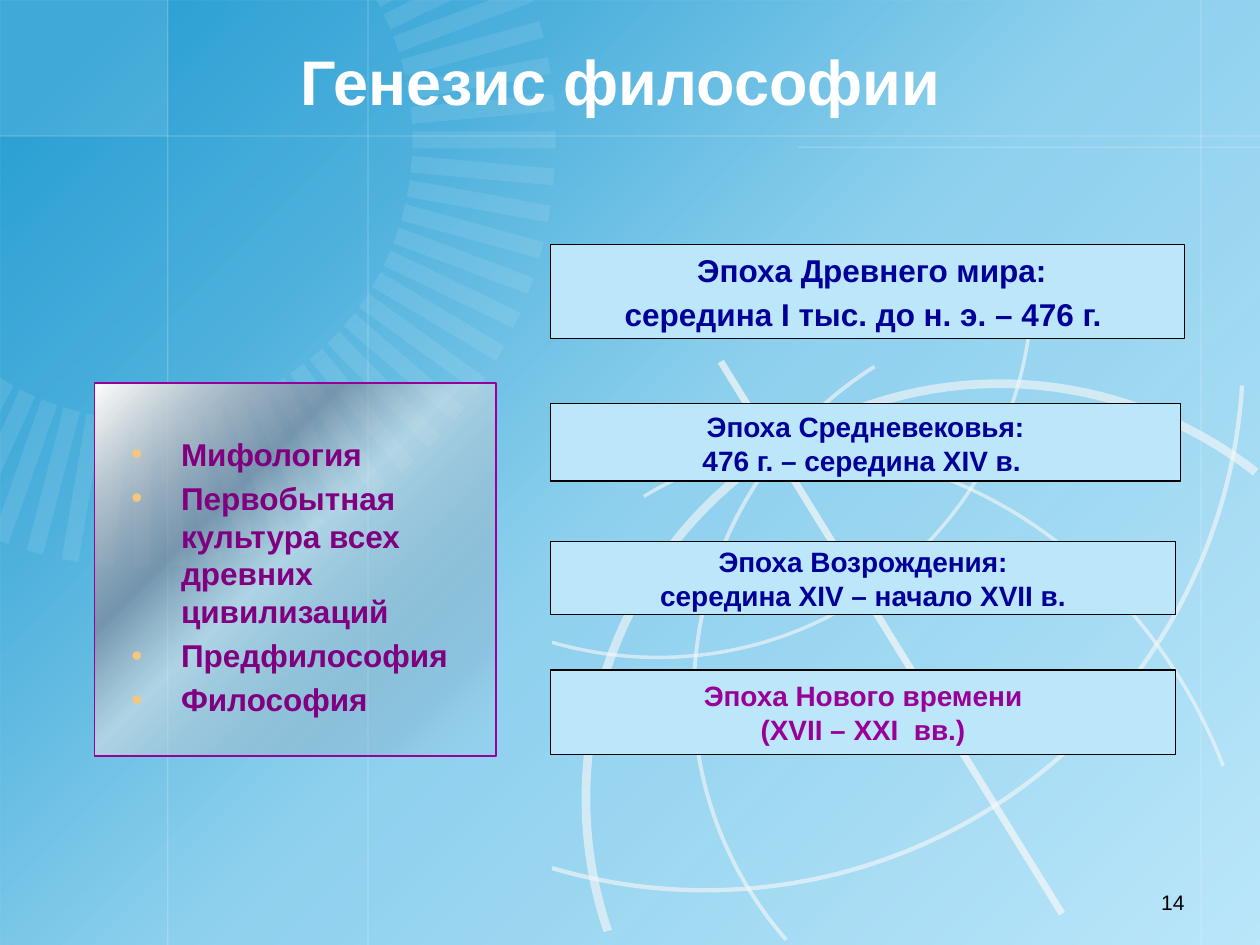
from collections import namedtuple
from dataclasses import dataclass
from math import cos, radians, sin

from lxml import etree
from pptx import Presentation
from pptx.dml.color import RGBColor
from pptx.enum.shapes import MSO_CONNECTOR, MSO_SHAPE
from pptx.enum.text import MSO_ANCHOR, PP_ALIGN
from pptx.oxml.ns import qn
from pptx.util import Cm, Pt

RECTANGLE, STRAIGHT = MSO_SHAPE.RECTANGLE, MSO_CONNECTOR.STRAIGHT
TOP, MIDDLE, BOTTOM = MSO_ANCHOR.TOP, MSO_ANCHOR.MIDDLE, MSO_ANCHOR.BOTTOM
LEFT, CENTER, RIGHT = PP_ALIGN.LEFT, PP_ALIGN.CENTER, PP_ALIGN.RIGHT

Box = namedtuple("Box", "x y w h")


@dataclass(frozen=True)
class Theme:
    """Colours, font and type sizes of the slide."""
    font: str = "Arial"
    sky: str = "BCE7FA"
    ray: str = "F2FAFE"
    globe: str = "F8F8F8"
    white: str = "FFFFFF"
    black: str = "000000"
    navy: str = "000099"
    purple: str = "800080"
    magenta: str = "990099"
    bullet: str = "F5C77E"
    title: int = 36
    body: int = 18
    era: int = 16
    number: int = 12
    sky_stops: tuple = ((6, "0F92CC", 83), (26, "0F92CC", 63),
                        (50, "0F92CC", 27), (100, "0F92CC", 0))
    steel_stops: tuple = ((0, "FFFFFF", 100), (7, "E6E6E6", 93), (32, "7D8496", 68),
                          (47, "E6E6E6", 53), (85, "7D8496", 15), (100, "E6E6E6", 0))


THEME = Theme()
SLIDE = Box(0, 0, 25.4, 19.05)


def rgb(value):
    """Return a colour from its hex value."""
    return RGBColor.from_string(value)


def apply(target, values):
    """Set each format value on the target."""
    for name, value in values.items():
        setattr(target, name, value)


def add_child(parent, tag, **attributes):
    """Append a drawing element with the given attributes."""
    child = etree.SubElement(parent, qn(tag))
    for name, value in attributes.items():
        child.set(name, str(value))
    return child


def fade(item, opacity):
    """Give every solid colour of an item the opacity in percent."""
    for colour in item._element.spPr.iter(qn("a:srgbClr")):
        add_child(colour, "a:alpha", val=opacity * 1000)


def paint_gradient(shape, stops):
    """Fill a shape with a diagonal gradient of (position, colour, opacity)."""
    shape.fill.background()
    blank = shape._element.spPr.find(qn("a:noFill"))
    gradient = etree.Element(qn("a:gradFill"), rotWithShape="1")
    stop_list = add_child(gradient, "a:gsLst")
    for position, colour, opacity in stops:
        stop = add_child(stop_list, "a:gs", pos=position * 1000)
        add_child(add_child(stop, "a:srgbClr", val=colour), "a:alpha", val=opacity * 1000)
    add_child(gradient, "a:lin", ang=45 * 60000, scaled=0)
    blank.getparent().replace(blank, gradient)


def style_shape(shape, fill=None, line=None, width=0.75):
    """Set plain fill and outline, and drop the shadow."""
    shape.shadow.inherit = False
    if fill:
        shape.fill.solid()
        shape.fill.fore_color.rgb = rgb(fill)
    else:
        shape.fill.background()
    if line:
        shape.line.color.rgb = rgb(line)
        shape.line.width = Pt(width)
    else:
        shape.line.fill.background()


def add_rectangle(slide, box, **style):
    """Add a styled rectangle filling the box."""
    shape = slide.shapes.add_shape(RECTANGLE, *map(Cm, box))
    style_shape(shape, **style)
    return shape


def add_line(slide, start, end, colour, width, opacity):
    """Add a translucent straight line."""
    line = slide.shapes.add_connector(STRAIGHT, *map(Cm, (*start, *end)))
    line.line.color.rgb = rgb(colour)
    line.line.width = Pt(width)
    add_child(line._element.spPr, "a:effectLst")
    fade(line, opacity)


def add_outline(slide, points, close, opacity, **style):
    """Add a translucent freeform through the points."""
    corners = [(Cm(x), Cm(y)) for x, y in points]
    builder = slide.shapes.build_freeform(*corners[0])
    builder.add_line_segments(corners[1:], close=close)
    shape = builder.convert_to_shape()
    style_shape(shape, **style)
    fade(shape, opacity)


def write(shape, lines, size, colour, bold=True, align=CENTER, anchor=MIDDLE,
          gap=0, wrap=True, bullets=False, **margins):
    """Write the lines as paragraphs of one shape."""
    frame = shape.text_frame
    apply(frame, {"word_wrap": wrap, "vertical_anchor": anchor, **margins})
    for index, text in enumerate(lines):
        paragraph = frame.paragraphs[0] if index == 0 else frame.add_paragraph()
        if bullets:
            properties = paragraph._p.get_or_add_pPr()
            apply_indent = {"marL": Cm(1.5), "indent": -Cm(1)}
            for name, value in apply_indent.items():
                properties.set(name, str(value))
            add_child(add_child(properties, "a:buClr"), "a:srgbClr", val=THEME.bullet)
            add_child(properties, "a:buFont", typeface=THEME.font)
            add_child(properties, "a:buChar", char="•")
        paragraph.alignment = align
        paragraph.space_before = Pt(gap if index else 0)
        run = paragraph.add_run()
        run.text = text
        apply(run.font, {"name": THEME.font, "size": Pt(size), "bold": bold})
        run.font.color.rgb = rgb(colour)


def clip(points, axis):
    """Cut a polygon at zero on one axis."""
    kept = []
    for before, after in zip(points[-1:] + points[:-1], points):
        if (before[axis] < 0) != (after[axis] < 0):
            share = before[axis] / (before[axis] - after[axis])
            kept.append(tuple(b + share * (a - b) for b, a in zip(before, after)))
        if after[axis] >= 0:
            kept.append(after)
    return kept


def draw_grid(slide, box):
    """Draw the tinted sky, its corner and the thin grid lines."""
    paint_gradient(add_rectangle(slide, box), THEME.sky_stops)
    fade(add_rectangle(slide, Box(box.x, box.y, 3.38, 2.74), fill=THEME.white), 10)
    right, bottom = box.x + box.w, box.y + box.h
    columns = [((box.x + x, box.y), (box.x + x, bottom)) for x in (3.38, 24.21, 7.42)]
    rows = [((box.x + x, box.y + y), (right, box.y + y)) for x, y in ((0, 2.74), (16.08, 2.97))]
    for start, end in columns + rows:
        add_line(slide, start, end, THEME.white, 0.75, 20)


def draw_sunburst(slide, box):
    """Draw rays every five degrees between two ellipses centred in the box."""
    center_x, center_y = box.x + box.w / 2, box.y + box.h / 2
    inner, half = 0.654, 0.17
    for degrees in range(-30, 125, 5):
        across, down = cos(radians(degrees)), sin(radians(degrees))
        ray = [(center_x + box.w / 2 * reach * across - side * down,
                center_y + box.h / 2 * reach * down + side * across)
               for reach, side in ((inner, -half), (1, -half), (1, half), (inner, half))]
        add_outline(slide, clip(clip(ray, 0), 1), True, 10, fill=THEME.ray)


def sample_curve(knots, steps=40):
    """Return points along a chain of cubic curves."""
    points = [knots[0]]
    for first in range(0, len(knots) - 1, 3):
        a, b, c, d = knots[first:first + 4]
        for step in range(1, steps + 1):
            t = step / steps
            u = 1 - t
            points.append(tuple(u**3 * p + 3 * u * u * t * q + 3 * u * t * t * r + t**3 * s
                                for p, q, r, s in zip(a, b, c, d)))
    return points


def draw_globe(slide, box):
    """Draw the rim, meridians, parallels and axis of the globe."""
    arcs = (
        (5, ((12.78, 19.99), (10.67, 16), (12.12, 11.07), (16.03, 8.84),
             (19.91, 6.6), (24.89, 7.87), (27.28, 11.71))),
        (2, ((12.98, 10.01), (14.86, 8.84), (17.27, 8.79), (19.56, 9.86),
             (21.82, 10.9), (23.7, 12.95), (24.66, 15.44))),
        (2.25, ((17.63, 7.39), (15.65, 8.64), (14.33, 10.72), (14.05, 13.03),
                (13.74, 15.37), (14.55, 17.68), (16.21, 19.33))),
        (2, ((11.13, 12.95), (13.34, 13.59), (15.72, 13.21), (17.6, 11.89),
             (19.48, 10.57), (20.65, 8.46), (20.8, 6.17))),
        (2.5, ((11.13, 17.5), (14.3, 18.44), (17.73, 17.88), (20.42, 16),
               (23.14, 14.1), (24.84, 11.07), (25.04, 7.77))),
    )
    for width, knots in arcs:
        visible = [(box.x + x, box.y + y) for x, y in sample_curve(knots)
                   if x <= box.w and y <= box.h]
        add_outline(slide, visible, False, 60, line=THEME.globe, width=width)
    add_line(slide, (box.x + 14.53, box.y + 7.29), (box.x + 21.41, box.y + 18.42),
             THEME.globe, 4, 70)


def place_text(slide, box, text, **style):
    """Place one line of free text in the box."""
    write(slide.shapes.add_textbox(*map(Cm, box)), [text], **style)


def place_origins(slide, box):
    """Place the bulleted panel of the origins of philosophy."""
    panel = add_rectangle(slide, box, line=THEME.magenta)
    paint_gradient(panel, THEME.steel_stops)
    origins = ("Мифология", "Первобытная культура всех древних цивилизаций",
               "Предфилософия", "Философия")
    write(panel, origins, THEME.body, THEME.purple, align=LEFT, anchor=BOTTOM,
          gap=3.6, bullets=True, margin_bottom=Cm(0.76))


def place_eras(slide, box):
    """Place the four era panels down the box."""
    eras = (
        (0, 12.78, 1.9, (" Эпоха Древнего мира:", "середина I тыс. до н. э. – 476 г. "),
         {"size": THEME.body, "anchor": BOTTOM, "gap": 3.6}),
        (3.2, 12.7, 1.57, ("Эпоха Средневековья:", "476 г. – середина XIV в. "), {"anchor": TOP}),
        (5.99, 12.6, 1.47, ("Эпоха Возрождения:", "середина XIV – начало XVII в."),
         {"wrap": False}),
        (8.58, 12.6, 1.7, ("Эпоха Нового времени", "(XVII – XXI  вв.)"),
         {"wrap": False, "colour": THEME.magenta}),
    )
    for drop, width, height, lines, changes in eras:
        panel = add_rectangle(slide, Box(box.x, box.y + drop, width, height),
                              fill=THEME.sky, line=THEME.black)
        write(panel, lines, **{"size": THEME.era, "colour": THEME.navy, **changes})


def main():
    """Build the slide and save it."""
    deck = Presentation()
    apply(deck, {"slide_width": Cm(SLIDE.w), "slide_height": Cm(SLIDE.h)})
    slide = deck.slides.add_slide(deck.slide_layouts[6])
    slide.background.fill.solid()
    slide.background.fill.fore_color.rgb = rgb(THEME.sky)
    draw_grid(slide, SLIDE)
    draw_sunburst(slide, Box(-5.48, -5.79, 16.68, 17.22))
    draw_globe(slide, SLIDE)
    place_text(slide, Box(22.43, 17.68, 1.7, 1.02), "14", size=THEME.number,
               colour=THEME.black, bold=False, align=RIGHT)
    place_text(slide, Box(0.89, 0, 23.24, 2.51), "Генезис философии", size=THEME.title,
               colour=THEME.white, anchor=BOTTOM)
    place_origins(slide, Box(1.9, 7.72, 8.1, 7.52))
    place_eras(slide, Box(11.1, 4.93, 12.78, 10.28))
    deck.save("out.pptx")


if __name__ == "__main__":
    main()
